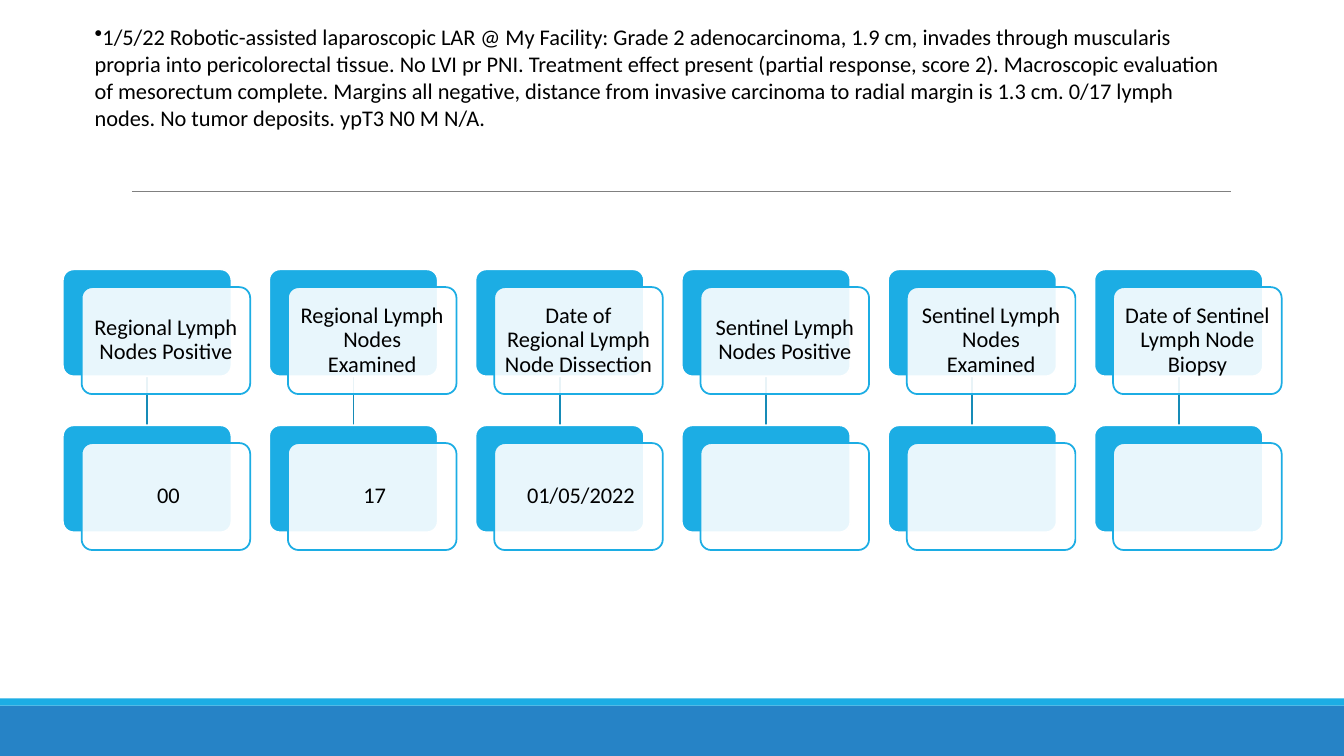
import pptx
import pptx.util
import pptx.dml.color
import pptx.enum.shapes
import pptx.enum.text
import pptx.oxml
import pptx.oxml.ns
import lxml.etree

Pt = pptx.util.Pt
RGBColor = pptx.dml.color.RGBColor
SHAPE = pptx.enum.shapes.MSO_SHAPE
STRAIGHT = pptx.enum.shapes.MSO_CONNECTOR.STRAIGHT
qn = pptx.oxml.ns.qn

SKY = RGBColor(0x1C, 0xAD, 0xE4)
BLUE = RGBColor(0x26, 0x83, 0xC6)
TEAL = RGBColor(0x16, 0x8B, 0xB7)
GRAY = RGBColor(0x80, 0x80, 0x80)
WHITE = RGBColor(0xFF, 0xFF, 0xFF)
BLACK = RGBColor(0x00, 0x00, 0x00)

REPORT = (
    "1/5/22 Robotic-assisted laparoscopic LAR @ My Facility: Grade 2 adenocarcinoma, "
    "1.9 cm, invades through muscularis propria into pericolorectal tissue. No LVI pr PNI. "
    "Treatment effect present (partial response, score 2). Macroscopic evaluation of "
    "mesorectum complete. Margins all negative, distance from invasive carcinoma to radial "
    "margin is 1.3 cm. 0/17 lymph nodes. No tumor deposits. ypT3 N0 M N/A."
)
FIELDS = [
    ("Regional Lymph Nodes Positive", " 00"),
    ("Regional Lymph Nodes Examined", " 17"),
    ("Date of Regional Lymph Node Dissection", " 01/05/2022"),
    ("Sentinel Lymph Nodes Positive", ""),
    ("Sentinel Lymph Nodes Examined", ""),
    ("Date of Sentinel Lymph Node Biopsy", ""),
]
CARD_WIDTH, CARD_HEIGHT = 120.4, 76.4
FIRST_LEFT, COLUMN_PITCH = 44.9, 147.36
FIRST_TOP, ROW_PITCH = 192.4, 111.4
FRONT_OFFSET_X, FRONT_OFFSET_Y = 13.4, 12.7

prs = pptx.Presentation()
prs.slide_width, prs.slide_height = Pt(960), Pt(540)
slide = prs.slides.add_slide(prs.slide_layouts[6])


def add_block(kind, left, top, width, height, fill, outline=None):
    block = slide.shapes.add_shape(kind, Pt(left), Pt(top), Pt(width), Pt(height))
    block.shadow.inherit = False
    block.fill.solid()
    block.fill.fore_color.rgb = fill
    if outline is None:
        block.line.fill.background()
    else:
        block.line.color.rgb = outline
        block.line.width = Pt(1.25)
        block.adjustments[0] = 0.1
    return block


def add_rule(left, top, right, bottom, color, weight):
    rule = slide.shapes.add_connector(STRAIGHT, Pt(left), Pt(top), Pt(right), Pt(bottom))
    rule.line.color.rgb = color
    rule.line.width = Pt(weight)
    lxml.etree.SubElement(rule._element.spPr, qn("a:effectLst"))
    return rule


# Footer bands and divider
add_block(SHAPE.RECTANGLE, 0, 504, 960, 36, BLUE)
add_block(SHAPE.RECTANGLE, 0, 498.8, 960, 5.2, SKY)
add_rule(94.3, 136.6, 879, 136.6, GRAY, 0.5)

# Links from each field to its value, drawn first so that the cards cover them
links = []
for column in range(len(FIELDS)):
    center = FIRST_LEFT + column * COLUMN_PITCH + CARD_WIDTH / 2
    links.append(add_rule(center, FIRST_TOP + CARD_HEIGHT, center, FIRST_TOP + ROW_PITCH,
                          TEAL, 1.25))

# Field cards above, value cards below
for column, (link, field) in enumerate(zip(links, FIELDS)):
    left = FIRST_LEFT + column * COLUMN_PITCH
    backs = []
    for row, wording in enumerate(field):
        top = FIRST_TOP + row * ROW_PITCH
        backs.append(add_block(SHAPE.ROUNDED_RECTANGLE, left, top,
                               CARD_WIDTH, CARD_HEIGHT, SKY, WHITE))
        front = add_block(SHAPE.ROUNDED_RECTANGLE, left + FRONT_OFFSET_X, top + FRONT_OFFSET_Y,
                          CARD_WIDTH, CARD_HEIGHT, WHITE, SKY)
        fill_color = front._element.spPr.find(qn("a:solidFill"))[0]
        lxml.etree.SubElement(fill_color, qn("a:alpha"), val="90000")
        if not wording:
            continue
        frame = front.text_frame
        frame.word_wrap = True
        frame.vertical_anchor = pptx.enum.text.MSO_ANCHOR.MIDDLE
        frame.margin_left = frame.margin_right = Pt(4.8)
        frame.margin_top = frame.margin_bottom = Pt(4.8)
        frame.text = wording
        paragraph = frame.paragraphs[0]
        paragraph.alignment = pptx.enum.text.PP_ALIGN.CENTER
        paragraph.line_spacing = 0.9
        font = paragraph.runs[0].font
        font.name, font.size = "Calibri", Pt(16)
        font.color.rgb = BLACK
    link.begin_connect(backs[0], 2)
    link.end_connect(backs[1], 0)

# Pathology report
report = slide.shapes.add_textbox(Pt(60.5), Pt(13), Pt(823), Pt(85))
report.text_frame.word_wrap = True
report.text_frame.text = REPORT
paragraph = report.text_frame.paragraphs[0]
lxml.etree.SubElement(paragraph._p.get_or_add_pPr(), qn("a:buChar"), char="•")
font = paragraph.runs[0].font
font.name, font.size = "Calibri", Pt(16)
font.color.rgb = BLACK

prs.save("out.pptx")
